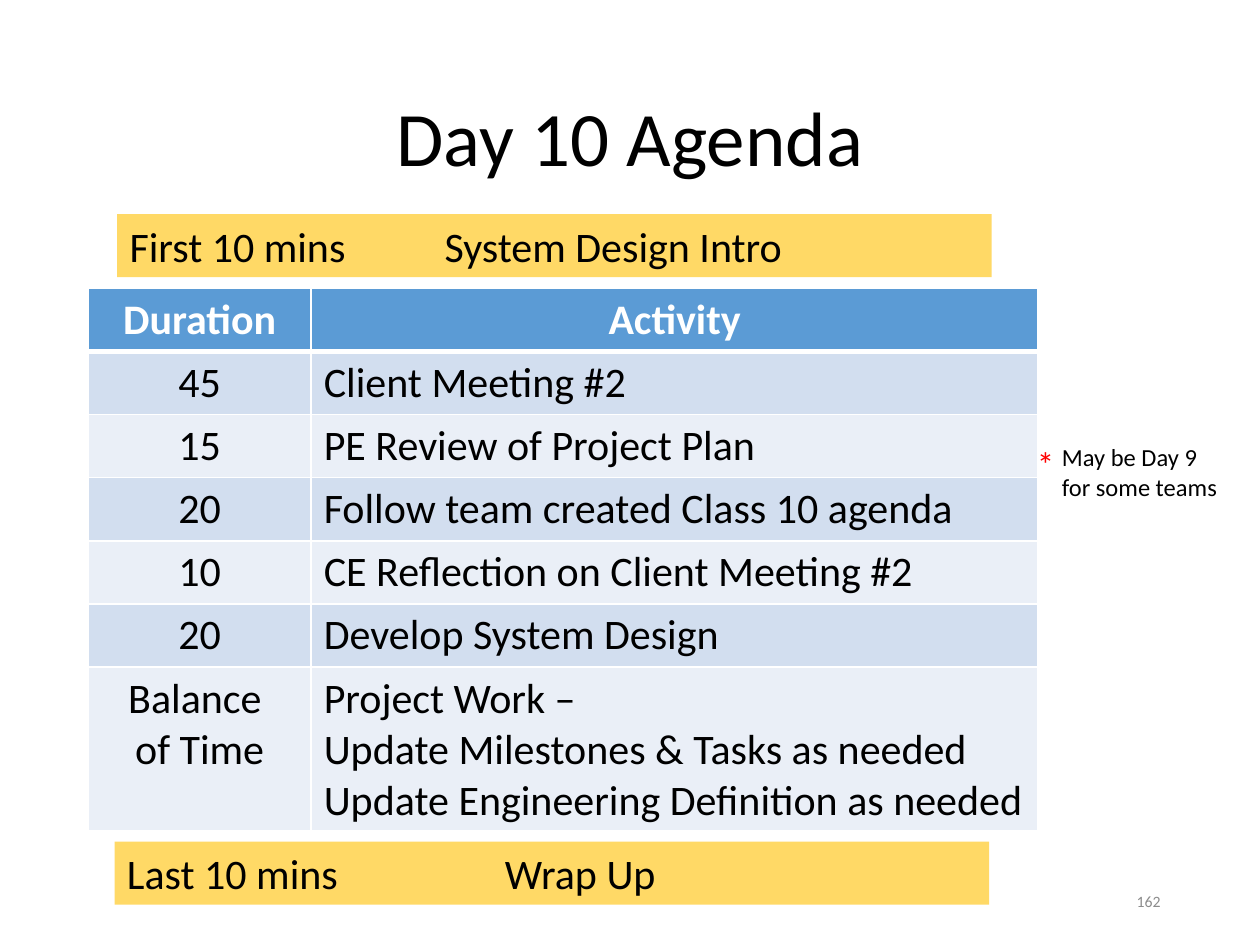
from lxml import etree
from pptx import Presentation
from pptx.dml.color import RGBColor
from pptx.enum.shapes import MSO_SHAPE as Shape
from pptx.enum.text import MSO_ANCHOR as Anchor, MSO_AUTO_SIZE as AutoSize, PP_ALIGN as Align
from pptx.oxml import parse_xml
from pptx.oxml.ns import nsdecls
from pptx.util import Inches, Pt

BLACK = RGBColor(0x00, 0x00, 0x00)
WHITE = RGBColor(0xFF, 0xFF, 0xFF)
GRAY = RGBColor(0x8C, 0x8C, 0x8C)
RED = RGBColor(0xFF, 0x00, 0x00)
GOLD = RGBColor(0xFF, 0xD9, 0x66)
BLUE = RGBColor(0x5B, 0x9B, 0xD5)
BAND_DARK = RGBColor(0xD2, 0xDE, 0xEF)
BAND_LIGHT = RGBColor(0xEA, 0xEF, 0xF7)

COLUMN_WIDTHS = (1.77, 5.77)
ROW_HEIGHT = 0.41
AGENDA = [
    ("Duration", "Activity"),
    ("45", "Client Meeting #2"),
    ("15", "PE Review of Project Plan"),
    ("20", "Follow team created Class 10 agenda"),
    ("10", "CE Reflection on Client Meeting #2"),
    ("20", "Develop System Design"),
    ("Balance \nof Time",
     "Project Work –\nUpdate Milestones & Tasks as needed\nUpdate Engineering Definition as needed"),
]


def write(frame, text, size, color=BLACK, bold=False, align=Align.LEFT):
    frame.text = text
    for para in frame.paragraphs:
        para.alignment = align
        for span in para.runs:
            formats = {"name": "Calibri", "size": Pt(size), "bold": bold}
            for name, value in formats.items():
                setattr(span.font, name, value)
            span.font.color.rgb = color


def place(shape, box):
    for name, value in zip(("left", "top", "width", "height"), box):
        setattr(shape, name, Inches(value))


def add_title(page, box, text):
    title = page.shapes.title
    place(title, box)
    write(title.text_frame, text, 44, align=Align.CENTER)
    title.text_frame.vertical_anchor = Anchor.MIDDLE
    title.text_frame.paragraphs[0].line_spacing = 0.9


def add_label(page, box, text, size, color=BLACK, align=Align.LEFT, anchor=Anchor.TOP):
    label = page.shapes.add_textbox(*map(Inches, box))
    label.text_frame.word_wrap = True
    label.text_frame.vertical_anchor = anchor
    write(label.text_frame, text, size, color, align=align)


def add_bar(page, box, text):
    bar = page.shapes.add_shape(Shape.RECTANGLE, *map(Inches, box))
    bar.shadow.inherit = False
    bar.fill.solid()
    bar.fill.fore_color.rgb = GOLD
    bar.line.fill.background()
    formats = {"word_wrap": True, "vertical_anchor": Anchor.TOP,
               "auto_size": AutoSize.SHAPE_TO_FIT_TEXT}
    for name, value in formats.items():
        setattr(bar.text_frame, name, value)
    write(bar.text_frame, text, 24)


def set_borders(cell, bottom_width):
    widths = {"lnL": 1, "lnR": 1, "lnT": 1, "lnB": bottom_width}
    properties = cell._tc.get_or_add_tcPr()
    for index, (side, width) in enumerate(widths.items()):
        border = parse_xml(f'<a:{side} {nsdecls("a")} w="{Pt(width)}"/>')
        fill = etree.SubElement(border, border.tag.replace(side, "solidFill"))
        etree.SubElement(fill, border.tag.replace(side, "srgbClr"), val=str(WHITE))
        properties.insert(index, border)


def add_agenda(page, box):
    table = page.shapes.add_table(len(AGENDA), len(COLUMN_WIDTHS), *map(Inches, box)).table
    table.horz_banding = False
    for column, width in zip(table.columns, COLUMN_WIDTHS):
        column.width = Inches(width)
    for row_index, texts in enumerate(AGENDA):
        table.rows[row_index].height = Inches(ROW_HEIGHT)
        header = row_index == 0
        band = BLUE if header else (BAND_LIGHT, BAND_DARK)[row_index % 2]
        for column_index, text in enumerate(texts):
            cell = table.cell(row_index, column_index)
            centered = header or column_index == 0
            write(cell.text_frame, text, 24, WHITE if header else BLACK, header,
                  Align.CENTER if centered else Align.LEFT)
            cell.fill.solid()
            cell.fill.fore_color.rgb = band
            set_borders(cell, 3 if header else 1)


def add_footnote(page, left, top):
    add_label(page, (left + 0.2, top, 1.5, 0.57), "May be Day 9 for some teams", 14)
    add_label(page, (left, top, 0.42, 0.44), "*", 20, RED)


def main():
    deck = Presentation()
    deck.slide_width, deck.slide_height = Inches(10), Inches(7.5)
    page = deck.slides.add_slide(deck.slide_layouts[5])
    add_title(page, (0.69, 0.4, 8.62, 1.45), "Day 10 Agenda")
    add_label(page, (7.06, 6.95, 2.25, 0.4), "162", 9, GRAY, Align.RIGHT, Anchor.MIDDLE)
    add_agenda(page, (0.7, 2.29, sum(COLUMN_WIDTHS), ROW_HEIGHT * len(AGENDA)))
    add_footnote(page, 8.13, 3.46)
    add_bar(page, (0.93, 1.7, 6.94, 0.5), "First 10 mins\t\tSystem Design Intro")
    add_bar(page, (0.91, 6.68, 6.94, 0.5), "Last 10 mins\t\t\tWrap Up")
    deck.save("out.pptx")


if __name__ == "__main__":
    main()
